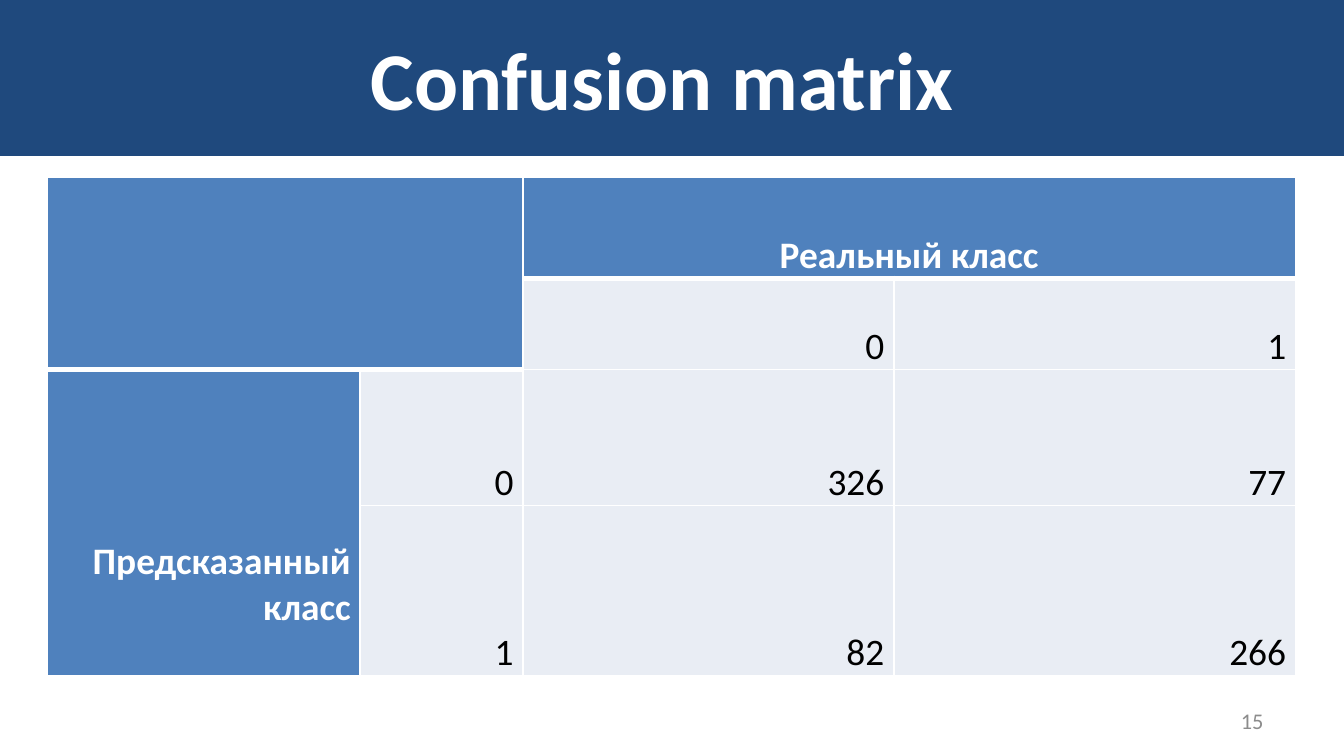
"""Build a slide with a confusion matrix table."""
from dataclasses import dataclass

from lxml import etree
from pptx import Presentation
from pptx import util as u
from pptx.dml.color import RGBColor
from pptx.enum import shapes, text
from pptx.oxml import ns

COLORS = {
    "banner": "1F497D",
    "header": "4F81BD",
    "value": "E9EDF4",
    "white": "FFFFFF",
    "black": "000000",
    "number": "8C8C8C",
}
SLIDE_WIDTH = u.Inches(10)
COLUMN_WIDTHS = (2.33, 1.21, 2.76, 2.99)
ROW_HEIGHTS = (0.75, 0.68, 1.01, 1.27)
CENTER = text.PP_ALIGN.CENTER
RIGHT = text.PP_ALIGN.RIGHT
MIDDLE = text.MSO_ANCHOR.MIDDLE
BOTTOM = text.MSO_ANCHOR.BOTTOM


@dataclass(frozen=True)
class MatrixCell:
    """A table cell with its place, span and look."""

    row: int
    column: int
    words: str = ""
    rows: int = 1
    columns: int = 1
    header: bool = False
    align: text.PP_ALIGN = RIGHT
    bottom_margin: float = 0
    top_line: float = 1
    bottom_line: float = 1


CELLS = (
    MatrixCell(0, 0, rows=2, columns=2, header=True, bottom_line=3),
    MatrixCell(0, 2, "Реальный класс", columns=2, header=True, align=CENTER, bottom_line=3),
    MatrixCell(1, 2, "0", top_line=3),
    MatrixCell(1, 3, "1", top_line=3),
    MatrixCell(2, 0, "Предсказанный класс", rows=2, header=True, bottom_margin=0.34, top_line=3),
    MatrixCell(2, 1, "0", top_line=3),
    MatrixCell(2, 2, "326"),
    MatrixCell(2, 3, "77"),
    MatrixCell(3, 1, "1"),
    MatrixCell(3, 2, "82"),
    MatrixCell(3, 3, "266"),
)


def rgb(name: str) -> RGBColor:
    """Return a named colour."""
    return RGBColor.from_string(COLORS[name])


def write_text(frame, words: str, *, size: float, color: str, align: text.PP_ALIGN,
               anchor: text.MSO_ANCHOR, bold: bool = False, spacing: float = 1.0) -> None:
    """Write one formatted paragraph into a text frame."""
    frame.word_wrap = True
    frame.vertical_anchor = anchor
    paragraph = frame.paragraphs[0]
    paragraph.alignment = align
    paragraph.line_spacing = spacing
    run = paragraph.add_run()
    run.text = words
    run.font.name = "Calibri"
    run.font.size = u.Pt(size)
    run.font.bold = bold
    run.font.color.rgb = rgb(color)


def set_borders(cell, top: float, bottom: float) -> None:
    """Draw white borders around a table cell."""
    properties = cell._tc.get_or_add_tcPr()
    for side, width in (("L", 1), ("R", 1), ("T", top), ("B", bottom)):
        line = etree.SubElement(properties, ns.qn(f"a:ln{side}"), w=str(u.Pt(width)))
        fill = etree.SubElement(line, ns.qn("a:solidFill"))
        etree.SubElement(fill, ns.qn("a:srgbClr"), val=COLORS["white"])


def draw_cell(table, item: MatrixCell) -> None:
    """Merge, border, fill and label one matrix cell."""
    cell = table.cell(item.row, item.column)
    last_row = item.row + item.rows - 1
    last_column = item.column + item.columns - 1
    if item.rows * item.columns > 1:
        cell.merge(table.cell(last_row, last_column))
    for row in range(item.row, last_row + 1):
        for column in range(item.column, last_column + 1):
            part = table.cell(row, column)
            set_borders(part, item.top_line, item.bottom_line)
            part.fill.solid()
            part.fill.fore_color.rgb = rgb("header" if item.header else "value")
    cell.margin_left = cell.margin_right = u.Inches(0.07)
    cell.margin_top = u.Inches(0)
    cell.margin_bottom = u.Inches(item.bottom_margin)
    cell.vertical_anchor = BOTTOM
    if item.words:
        write_text(cell.text_frame, item.words, size=20, align=item.align, anchor=BOTTOM,
                   color="white" if item.header else "black", bold=item.header,
                   spacing=1.0 if item.header else 1.15)


def draw_matrix(slide) -> None:
    """Add the confusion matrix table."""
    frame = slide.shapes.add_table(
        len(ROW_HEIGHTS), len(COLUMN_WIDTHS), u.Inches(0.35), u.Inches(1.32),
        u.Inches(sum(COLUMN_WIDTHS)), u.Inches(sum(ROW_HEIGHTS)))
    table = frame.table
    table.first_row = table.horz_banding = False
    for column, width in zip(table.columns, COLUMN_WIDTHS):
        column.width = u.Inches(width)
    for row, height in zip(table.rows, ROW_HEIGHTS):
        row.height = u.Inches(height)
    for item in CELLS:
        draw_cell(table, item)


def main() -> None:
    """Build and save the presentation."""
    presentation = Presentation()
    presentation.slide_width = SLIDE_WIDTH
    presentation.slide_height = SLIDE_WIDTH * 9 // 16
    slide = presentation.slides.add_slide(presentation.slide_layouts[6])

    banner = slide.shapes.add_shape(
        shapes.MSO_SHAPE.RECTANGLE, 0, 0, SLIDE_WIDTH, u.Inches(1.16))
    banner.shadow.inherit = False
    banner.fill.solid()
    banner.fill.fore_color.rgb = rgb("banner")
    banner.line.fill.background()
    write_text(banner.text_frame, "Confusion matrix ", size=44, color="white",
               align=CENTER, anchor=MIDDLE, bold=True)

    draw_matrix(slide)

    number = slide.shapes.add_textbox(
        u.Inches(7.17), u.Inches(5.21), u.Inches(2.33), u.Inches(0.3))
    write_text(number.text_frame, "15", size=12, color="number", align=RIGHT, anchor=MIDDLE)
    presentation.save("out.pptx")


if __name__ == "__main__":
    main()
